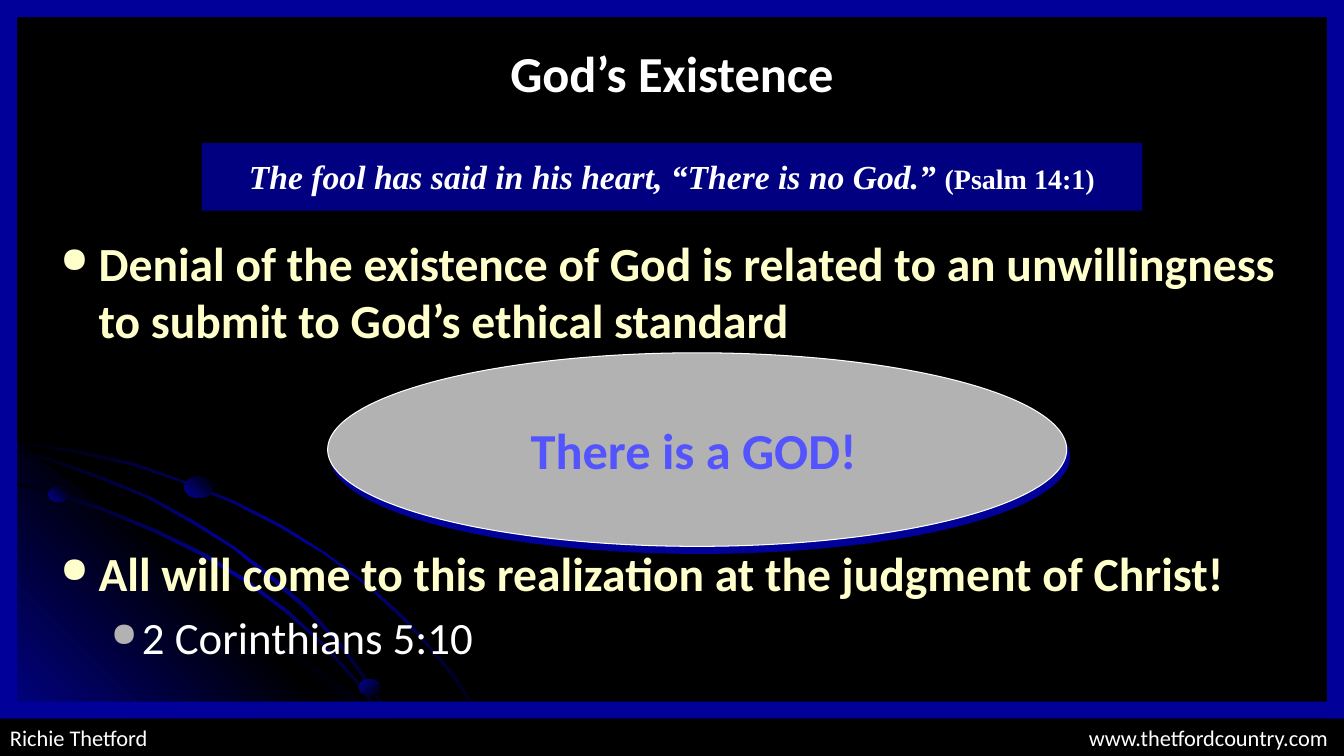
from lxml import etree
from pptx import Presentation
from pptx.dml.color import RGBColor
from pptx.enum.shapes import MSO_SHAPE
from pptx.enum.text import MSO_ANCHOR, PP_ALIGN
from pptx.util import Inches, Pt

RECT, OVAL = MSO_SHAPE.RECTANGLE, MSO_SHAPE.OVAL
LEFT, CENTER, RIGHT = PP_ALIGN.LEFT, PP_ALIGN.CENTER, PP_ALIGN.RIGHT
MIDDLE, TOP = MSO_ANCHOR.MIDDLE, MSO_ANCHOR.TOP
NS = "http://schemas.openxmlformats.org/drawingml/2006/main"
C = dict(black="000000", white="FFFFFF", blue="010199", navy="000080",
         cream="FFFFCC", gray="B2B2B2", violet="5454FE")

# Content
W, H, EDGE, FOOT = 13.33, 7.5, 0.17, 0.37
TITLE, CLAIM = "God’s Existence", "There is a GOD!"
QUOTE = [("The fool has said in his heart, “There is no God.” ", 24, True),
         ("(Psalm 14:1)", 20, False)]
# text, size, text colour, bullet colour, bold, left margin, hanging indent, space before
POINTS = [
    ("Denial of the existence of God is related to an unwillingness "
     "to submit to God’s ethical standard", 34, "cream", "cream", True, 0.38, 0.38, 0),
    ("All will come to this realization at the judgment of Christ!",
     34, "cream", "cream", True, 0.38, 0.38, 140),
    ("2 Corinthians 5:10", 32, "white", "gray", False, 0.81, 0.31, 6),
]
FOOTER = [("Richie Thetford", LEFT), ("www.thetfordcountry.com", RIGHT)]

# Background art: outlines, gradient colours and angle
ARC = ["black", "blue", "black"]
GLOW = ["blue", "black", "blue"]
OUTLINES = [
    ([(0.76, 4.47), (0.37, 4.41), (0, 4.35), (0, 4.38), (0.37, 4.43), (0.75, 4.49),
      (1.29, 4.61), (1.8, 4.78), (2.31, 4.99), (2.78, 5.23), (3.21, 5.49),
      (3.61, 5.79), (3.97, 6.12), (4.31, 6.49), (4.5, 6.73), (4.67, 6.98),
      (4.81, 7.23), (4.93, 7.49), (4.96, 7.49), (4.83, 7.23), (4.69, 6.98),
      (4.53, 6.73), (4.33, 6.48), (4, 6.11), (3.63, 5.78), (3.22, 5.48),
      (2.79, 5.21), (2.32, 4.97), (1.82, 4.77), (1.31, 4.59)], ARC, 45),
    ([(4.29, 7.49), (0, 7.49), (0, 4.27)], GLOW, 315),
    ([(3.8, 7.14), (3.92, 7.32), (4.01, 7.49), (4.04, 7.49), (3.94, 7.3), (3.82, 7.12),
      (3.55, 6.76), (3.23, 6.4), (2.86, 6.06), (2.46, 5.76), (2.03, 5.49),
      (1.56, 5.26), (1.05, 5.05), (0.54, 4.88), (0, 4.75), (0, 4.77), (0.51, 4.9),
      (1.03, 5.07), (1.53, 5.28), (2, 5.51), (2.44, 5.78), (2.84, 6.08),
      (3.21, 6.41), (3.53, 6.77)], ARC, 45),
    ([(0, 4.42), (0, 4.44), (0.49, 4.57), (0.99, 4.75), (1.46, 4.94), (1.89, 5.18),
      (2.31, 5.44), (2.69, 5.75), (3.03, 6.05), (3.37, 6.41), (3.56, 6.67),
      (3.74, 6.94), (3.89, 7.22), (4.01, 7.49), (4.04, 7.49), (3.91, 7.2),
      (3.76, 6.93), (3.58, 6.65), (3.39, 6.39), (3.06, 6.03), (2.72, 5.73),
      (2.33, 5.43), (1.91, 5.16), (1.49, 4.93), (1.01, 4.73), (0.51, 4.55)], ARC, 45),
]
BEADS = [((0.48, 4.83, 0.2, 0.15), 315), ((3.56, 6.74, 0.21, 0.16), 45),
         ((1.83, 4.73, 0.28, 0.21), 315)]

prs = Presentation()
prs.slide_width, prs.slide_height = Inches(W), Inches(H)
s = prs.slides.add_slide(prs.slide_layouts[6])
s.background.fill.solid()
s.background.fill.fore_color.rgb = RGBColor.from_string(C["black"])


def sub(parent, tag, **attrs):
    return etree.SubElement(parent, f"{{{NS}}}{tag}", {k: str(v) for k, v in attrs.items()})


def add_shape(kind, box, color=None):
    sp = s.shapes.add_shape(kind, *map(Inches, box))
    sp.shadow.inherit = False
    sp.line.fill.background()
    if color:
        sp.fill.solid()
        sp.fill.fore_color.rgb = RGBColor.from_string(C[color])
    return sp


def set_gradient(sp, colors, angle):
    sp.fill.gradient()
    sp.fill.gradient_angle = 360 - angle
    stops = sp._element.spPr.find(f"{{{NS}}}gradFill/{{{NS}}}gsLst")
    for gs in list(stops):
        stops.remove(gs)
    for i, name in enumerate(colors):
        gs = sub(stops, "gs", pos=100000 * i // (len(colors) - 1))
        sub(gs, "srgbClr", val=C[name])


def add_text(box, anchor=MIDDLE):
    tf = s.shapes.add_textbox(*map(Inches, box)).text_frame
    tf.word_wrap = True
    tf.vertical_anchor = anchor
    return tf


def add_run(p, text, size, color, font="Calibri", bold=False, italic=False):
    r = p.add_run()
    r.text = text
    r.font.name, r.font.size = font, Pt(size)
    r.font.bold, r.font.italic = bold, italic
    r.font.color.rgb = RGBColor.from_string(C[color])


def add_heading(box, text, color):
    p = add_text(box).paragraphs[0]
    p.alignment = CENTER
    add_run(p, text, 36, color, bold=True)


# Arcs, corner glow and beads
for points, colors, angle in OUTLINES:
    start, *rest = [(Inches(x), Inches(y)) for x, y in points]
    fb = s.shapes.build_freeform(*start, scale=1.0)
    fb.add_line_segments(rest, close=True)
    sp = fb.convert_to_shape()
    sp.shadow.inherit = False
    sp.line.fill.background()
    set_gradient(sp, colors, angle)
for box, angle in BEADS:
    set_gradient(add_shape(OVAL, box), ["blue", "black"], angle)

# Bulleted points
tf = add_text((0.5, 2.27, 12.42, 4.6), TOP)
for i, (text, size, color, bullet, bold, margin, hang, before) in enumerate(POINTS):
    p = tf.add_paragraph() if i else tf.paragraphs[0]
    p.space_before = Pt(before)
    add_run(p, text, size, color, bold=bold)
    pPr = p._p.get_or_add_pPr()
    pPr.set("marL", str(Inches(margin)))
    pPr.set("indent", str(-Inches(hang)))
    sub(sub(pPr, "buClr"), "srgbClr", val=C[bullet])
    sub(pPr, "buSzPct", val=75000)
    sub(pPr, "buChar", char="●")

# Title and quotation
add_heading((2, 0.3, 9.33, 0.83), TITLE, "white")
add_shape(RECT, (2, 1.42, 9.33, 0.67), "navy")
p = add_text((2.08, 1.5, 9.17, 0.5)).paragraphs[0]
p.alignment = CENTER
for text, size, italic in QUOTE:
    add_run(p, text, size, "white", "Times New Roman", True, italic)

# Claim oval with a solid offset shadow
oval = add_shape(OVAL, (3.25, 3.5, 7.33, 1.92), "gray")
oval.line.color.rgb = RGBColor.from_string(C["white"])
oval.line.width = Pt(0.75)
effects = oval._element.spPr.find(f"{{{NS}}}effectLst")
shadow = sub(effects, "outerShdw", blurRad=0, dist=Pt(5.4), dir=68 * 60000,
             algn="ctr", rotWithShape=0)
sub(shadow, "srgbClr", val=C["blue"])
add_heading((3.92, 4.08, 5.92, 0.75), CLAIM, "violet")

# Frame and footer
foot_top = H - FOOT
for x in (0, W - EDGE):
    add_shape(RECT, (x, 0, EDGE, H), "blue")
for y in (foot_top - EDGE, 0):
    add_shape(RECT, (EDGE, y, W - 2 * EDGE, EDGE), "blue")
add_shape(RECT, (0, foot_top, W, FOOT), "black")
for text, side in FOOTER:
    p = add_text((0 if side == LEFT else W / 2, foot_top, W / 2 - 0.06, FOOT)).paragraphs[0]
    p.alignment = side
    add_run(p, text, 16, "white")

prs.save("out.pptx")
